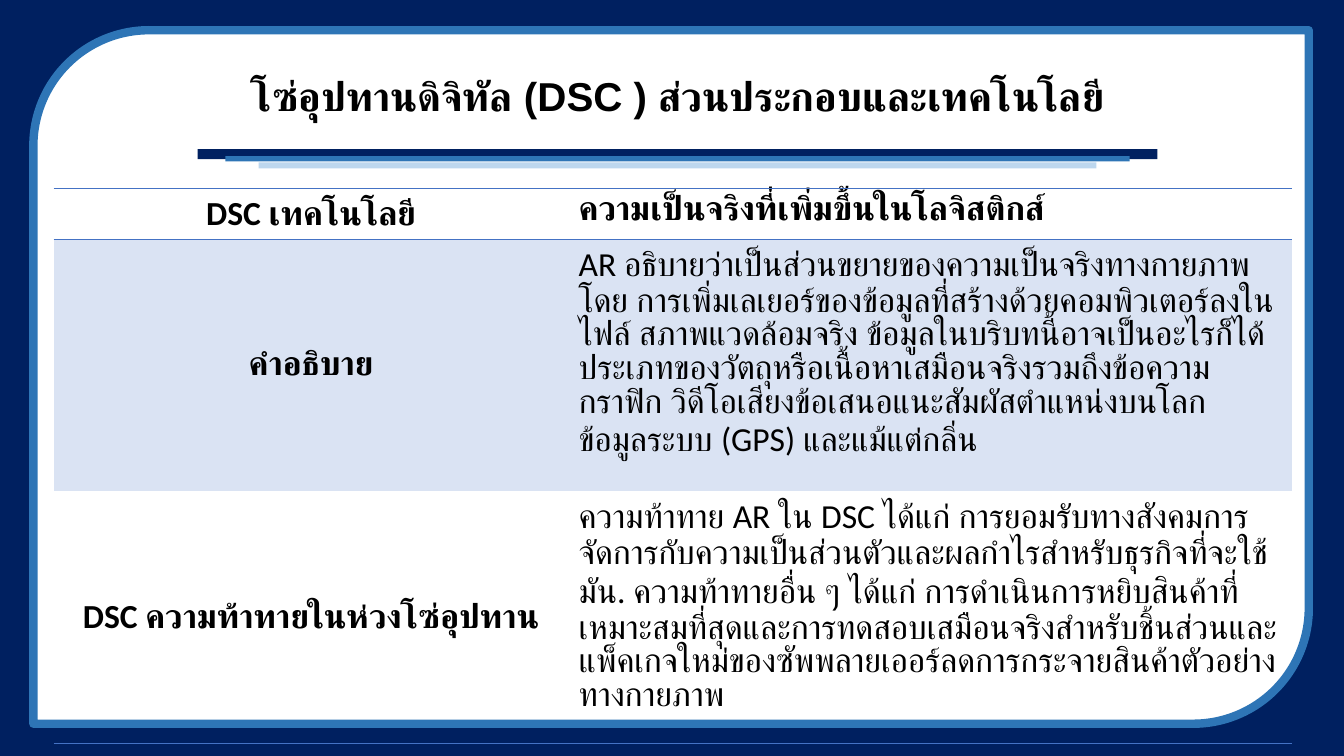
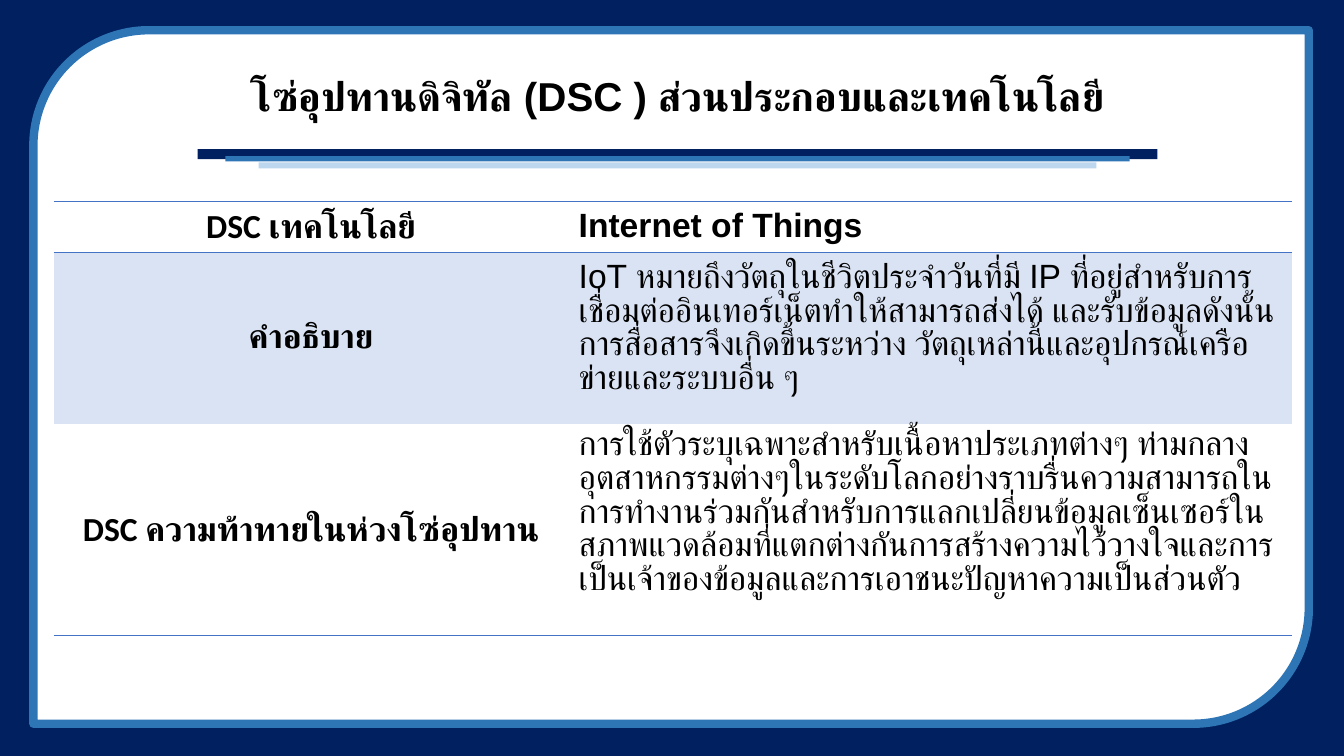
import pptx
import pptx.util
from pptx.dml.color import RGBColor
from pptx.enum.shapes import MSO_SHAPE
from pptx.enum.text import MSO_ANCHOR, PP_ALIGN
from lxml import etree

# Palette
NAVY = RGBColor(0x00, 0x20, 0x60)
BLUE = RGBColor(0x2E, 0x75, 0xB6)
PALE = RGBColor(0xBD, 0xD7, 0xEE)
RULE = RGBColor(0x44, 0x72, 0xC4)
BAND = RGBColor(0xDA, 0xE3, 0xF3)
WHITE = RGBColor(0xFF, 0xFF, 0xFF)
BLACK = RGBColor(0x00, 0x00, 0x00)

A = "http://schemas.openxmlformats.org/drawingml/2006/main"
TITLE = "โซ่อุปทานดิจิทัล (DSC ) ส่วนประกอบและเทคโนโลยี"
LABELS = ["DSC เทคโนโลยี", "คำอธิบาย", "DSC ความท้าทายในห่วงโซ่อุปทาน"]

# Per slide: body font, table top and row heights (% of slide height), right column
SLIDES = [
    ("Calibri", 24.93, [6.75, 29.9, 29.9], [
        "ความเป็นจริงที่เพิ่มขึ้นในโลจิสติกส์",
        "AR อธิบายว่าเป็นส่วนขยายของความเป็นจริงทางกายภาพโดย การเพิ่มเลเยอร์ของข้อมูลที่สร้างด้วยคอมพิวเตอร์ลงในไฟล์ "
        "สภาพแวดล้อมจริง ข้อมูลในบริบทนี้อาจเป็นอะไรก็ได้ ประเภทของวัตถุหรือเนื้อหาเสมือนจริงรวมถึงข้อความกราฟิก "
        "วิดีโอเสียงข้อเสนอแนะสัมผัสตำแหน่งบนโลก ข้อมูลระบบ (GPS) และแม้แต่กลิ่น",
        "ความท้าทาย AR ใน DSC ได้แก่ การยอมรับทางสังคมการจัดการกับความเป็นส่วนตัวและผลกำไรสำหรับธุรกิจที่จะใช้มัน. "
        "ความท้าทายอื่น ๆ ได้แก่ การดำเนินการหยิบสินค้าที่เหมาะสมที่สุดและการทดสอบเสมือนจริงสำหรับชิ้นส่วนและ"
        "แพ็คเกจใหม่ของซัพพลายเออร์ลดการกระจายสินค้าตัวอย่างทางกายภาพ",
    ]),
    ("Arial", 26.67, [6.75, 19.7, 23.54], [
        "Internet of Things",
        "IoT หมายถึงวัตถุในชีวิตประจำวันที่มี IP ที่อยู่สำหรับการเชื่อมต่ออินเทอร์เน็ตทำให้สามารถส่งได้ "
        "และรับข้อมูลดังนั้นการสื่อสารจึงเกิดขึ้นระหว่าง วัตถุเหล่านี้และอุปกรณ์เครือข่ายและระบบอื่น ๆ",
        "การใช้ตัวระบุเฉพาะสำหรับเนื้อหาประเภทต่างๆ ท่ามกลางอุตสาหกรรมต่างๆในระดับโลกอย่างราบรื่น"
        "ความสามารถในการทำงานร่วมกันสำหรับการแลกเปลี่ยนข้อมูลเซ็นเซอร์ในสภาพแวดล้อมที่แตกต่างกัน"
        "การสร้างความไว้วางใจและการเป็นเจ้าของข้อมูลและการเอาชนะปัญหาความเป็นส่วนตัว",
    ]),
]


def write(tf, text, size=24, font="Calibri", bold=False, align=PP_ALIGN.LEFT, spacing=None):
    p = tf.paragraphs[0]
    p.alignment = align
    p.line_spacing = spacing
    r = p.add_run()
    r.text = text
    r.font.size = pptx.util.Pt(size)
    r.font.name = font
    r.font.bold = bold
    r.font.color.rgb = BLACK


def set_borders(cell, ruled):
    """Draw a thin rule on the sides in ruled and clear the others."""
    tc_pr = cell._tc.get_or_add_tcPr()
    for i, side in enumerate("LRTB"):
        ln = etree.Element(f"{{{A}}}ln{side}", w="12700")
        if side in ruled:
            fill = etree.SubElement(ln, f"{{{A}}}solidFill")
            etree.SubElement(fill, f"{{{A}}}srgbClr", val=str(RULE))
        else:
            etree.SubElement(ln, f"{{{A}}}noFill")
        tc_pr.insert(i, ln)


class Deck:
    """Holds the style and current slide; lengths are percent of the slide."""

    def __init__(self):
        self.prs = pptx.Presentation()
        self.prs.slide_width = pptx.util.Inches(13.33)
        self.prs.slide_height = pptx.util.Inches(7.5)

    def x(self, share):
        return round(self.prs.slide_width * share / 100)

    def y(self, share):
        return round(self.prs.slide_height * share / 100)

    def box(self, left, top, width, height):
        return self.x(left), self.y(top), self.x(width), self.y(height)

    def shape(self, kind, left, top, width, height, fill, line=None):
        sp = self.s.shapes.add_shape(kind, *self.box(left, top, width, height))
        sp.shadow.inherit = False
        sp.fill.solid()
        sp.fill.fore_color.rgb = fill
        if line:
            sp.line.color.rgb = line
            sp.line.width = pptx.util.Pt(6)
        else:
            sp.line.fill.background()

    def new_slide(self):
        self.s = self.prs.slides.add_slide(self.prs.slide_layouts[6])
        # Backdrop and frame
        self.shape(MSO_SHAPE.RECTANGLE, 0, 0, 100, 100, NAVY)
        self.shape(MSO_SHAPE.ROUND_2_DIAG_RECTANGLE, 2.48, 4, 94.9, 91.73, WHITE, BLUE)
        # Centred bars under the title
        for top, width, height, fill in [(19.73, 71.42, 1.33, NAVY),
                                         (20.67, 67.29, 0.67, BLUE),
                                         (21.47, 62.34, 0.8, PALE)]:
            self.shape(MSO_SHAPE.RECTANGLE, 50.41 - width / 2, top, width, height, fill)

    def title(self, text):
        tf = self.s.shapes.add_textbox(*self.box(14.7, 6.53, 71.42, 12.93)).text_frame
        tf.word_wrap = True
        tf.vertical_anchor = MSO_ANCHOR.MIDDLE
        write(tf, text, size=28.8, font="Arial", bold=True, align=PP_ALIGN.CENTER, spacing=0.9)

    def table(self, top, heights, labels, texts, font):
        widths = [38.33, 53.79]
        area = self.box(3.98, top, sum(widths), sum(heights))
        table = self.s.shapes.add_table(len(labels), len(widths), *area).table
        table.first_row = table.horz_banding = False
        for column, width in zip(table.columns, widths):
            column.width = self.x(width)
        for i, (height, label, text) in enumerate(zip(heights, labels, texts)):
            table.rows[i].height = self.y(height)
            name, body = table.cell(i, 0), table.cell(i, 1)
            name.vertical_anchor = MSO_ANCHOR.MIDDLE
            write(name.text_frame, label, bold=True, align=PP_ALIGN.CENTER)
            write(body.text_frame, text, font=font, bold=i == 0)
            for cell in (name, body):
                if i == 1:
                    cell.fill.solid()
                    cell.fill.fore_color.rgb = BAND
                else:
                    cell.fill.background()
                set_borders(cell, ["TB", "T", "B"][i])


def main():
    deck = Deck()
    for font, top, heights, texts in SLIDES:
        deck.new_slide()
        deck.title(TITLE)
        deck.table(top, heights, LABELS, texts, font)
    deck.prs.save("out.pptx")


if __name__ == "__main__":
    main()
